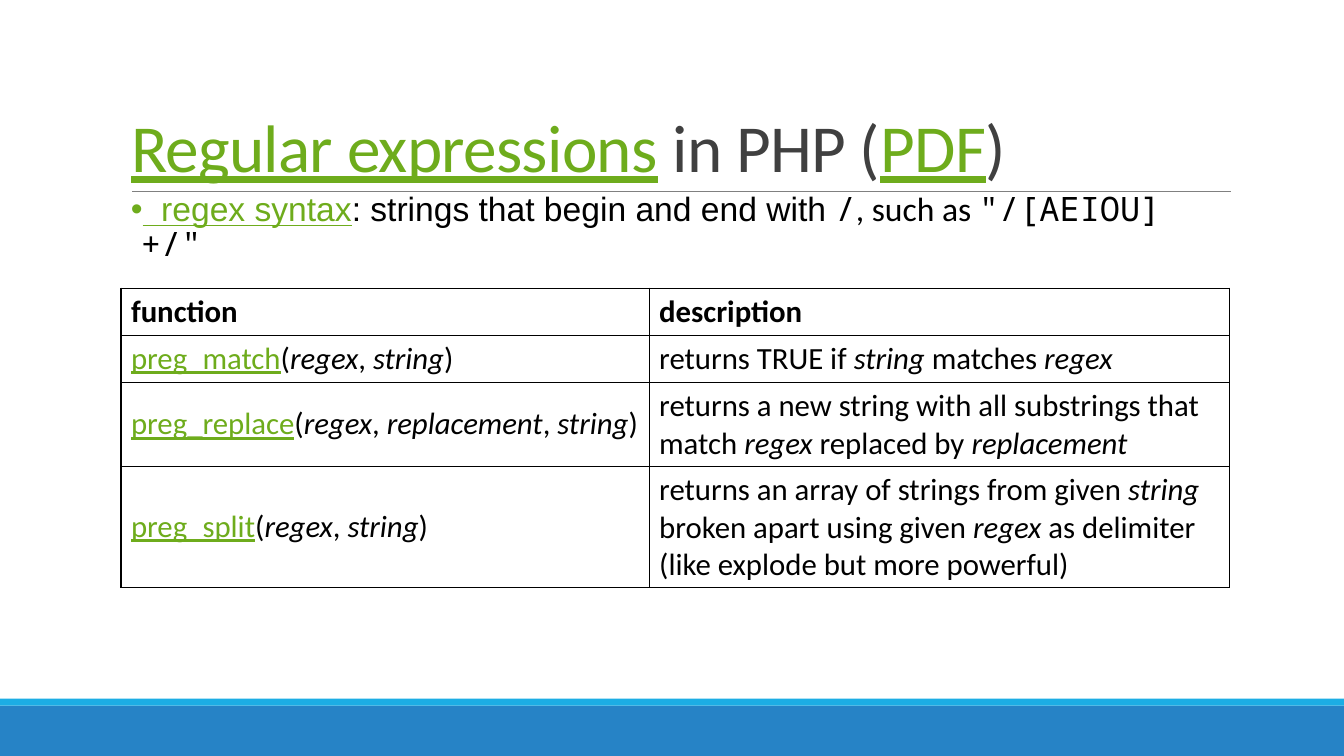
from typing import NamedTuple

from lxml import etree
from pptx import Presentation
from pptx import util as u
from pptx.dml.color import RGBColor
from pptx.enum import shapes, text
from pptx.oxml import ns

INK, LINK, GREY = "000000", "6EAC1C", "404040"
SANS, MONO = "Calibri", "Noto Sans Mono"
WIDE, HIGH = u.Inches(13.33), u.Inches(7.5)


class Run(NamedTuple):
    text: str
    color: str = INK
    font: str = SANS
    bold: bool = False
    ital: bool = False
    link: bool = False


class Bar(NamedTuple):
    top: float
    high: float
    color: str


class Row(NamedTuple):
    high: float
    left: list[Run]
    right: list[Run]


def hue(code: str) -> RGBColor:
    return RGBColor.from_string(code)


def across(share: float) -> int:
    return round(WIDE * share / 100)


def down(share: float) -> int:
    return round(HIGH * share / 100)


def area(left: float, top: float, wide: float, high: float) -> tuple[int, int, int, int]:
    return across(left), down(top), across(wide), down(high)


def link(word: str, font: str = SANS) -> Run:
    return Run(word, LINK, font, link=True)


def ital(word: str) -> Run:
    return Run(word, ital=True)


def call(name: str, *args: str) -> list[Run]:
    runs = [link(name), Run("(")]
    for spot, arg in enumerate(args):
        if spot:
            runs.append(Run(", "))
        runs.append(ital(arg))
    return runs + [Run(")")]


def write(para, runs: list[Run], size: float, gap: int = 0) -> None:
    for item in runs:
        run = para.add_run()
        run.text = item.text
        font = run.font
        font.name, font.size = item.font, u.Pt(size)
        font.bold, font.italic, font.underline = item.bold, item.ital, item.link
        font.color.rgb = hue(item.color)
        if gap:
            font._element.set("spc", str(gap))


def bullet(para, inset: int, color: str) -> None:
    props = para._p.get_or_add_pPr()
    props.set("marL", str(inset))
    props.set("indent", str(-inset))
    tint = etree.SubElement(props, ns.qn("a:buClr"))
    etree.SubElement(tint, ns.qn("a:srgbClr"), val=color)
    etree.SubElement(props, ns.qn("a:buFont"), typeface="Arial")
    etree.SubElement(props, ns.qn("a:buChar"), char="•")


def border(cell, color: str, width: int) -> None:
    props = cell._tc.get_or_add_tcPr()
    for spot, side in enumerate(("lnL", "lnR", "lnT", "lnB")):
        line = etree.Element(ns.qn(f"a:{side}"), w=str(width))
        fill = etree.SubElement(line, ns.qn("a:solidFill"))
        etree.SubElement(fill, ns.qn("a:srgbClr"), val=color)
        props.insert(spot, line)


def draw_bar(slide, bar: Bar) -> None:
    shape = slide.shapes.add_shape(
        shapes.MSO_SHAPE.RECTANGLE, *area(0, bar.top, 100, bar.high))
    shape.shadow.inherit = False
    shape.fill.solid()
    shape.fill.fore_color.rgb = hue(bar.color)
    shape.line.fill.background()


def draw_rule(slide) -> None:
    rule = slide.shapes.add_connector(
        shapes.MSO_CONNECTOR.STRAIGHT,
        across(9.83), down(25.33), across(91.6), down(25.33))
    rule.line.color.rgb = hue("808080")
    rule.line.width = u.Pt(0.5)
    etree.SubElement(rule._element.spPr, ns.qn("a:effectLst"))


def draw_title(slide, runs: list[Run]) -> None:
    title = slide.shapes.title
    title.left, title.top, title.width, title.height = area(9, 4.13, 82.5, 21.2)
    frame = title.text_frame
    frame.auto_size = text.MSO_AUTO_SIZE.NONE
    frame.vertical_anchor = text.MSO_ANCHOR.BOTTOM
    para = frame.paragraphs[0]
    para.alignment = text.PP_ALIGN.LEFT
    para.line_spacing = 0.85
    write(para, runs, 48, -50)


def draw_body(slide, runs: list[Run]) -> None:
    frame = slide.shapes.add_textbox(*area(9, 25.07, 78.84, 12.13)).text_frame
    frame.word_wrap = True
    para = frame.paragraphs[0]
    para.line_spacing = 0.85
    bullet(para, u.Inches(0.1), LINK)
    write(para, runs, 24)


def draw_table(slide, rows: list[Row], cols: list[float]) -> None:
    high = sum(row.high for row in rows)
    table = slide.shapes.add_table(
        len(rows), len(cols), *area(9, 38.13, sum(cols), high)).table
    table.first_row = table.horz_banding = False
    for col, wide in zip(table.columns, cols):
        col.width = across(wide)
    for line, row in zip(table.rows, rows):
        line.height = down(row.high)
        for cell, runs in zip(line.cells, (row.left, row.right)):
            cell.fill.background()
            cell.vertical_anchor = text.MSO_ANCHOR.MIDDLE
            border(cell, INK, u.Pt(1))
            write(cell.text_frame.paragraphs[0], runs, 22)


BARS = [Bar(93.33, 6.67, "2683C6"), Bar(92.4, 0.93, "1CADE4")]
TITLE = [link("Regular expressions"), Run(" in PHP (", GREY),
         link("PDF"), Run(")", GREY)]
BODY = [link("  regex syntax", "Arial"),
        Run(": strings that begin and end with ", font="Arial"),
        Run("/", font=MONO), Run(", such as "), Run('"/[AEIOU]+/"', font=MONO)]
ROWS = [
    Row(6.22, [Run("function", bold=True)], [Run("description", bold=True)]),
    Row(6.22, call("preg_match", "regex", "string"),
        [Run("returns TRUE if "), ital("string"), Run(" matches "), ital("regex")]),
    Row(11.1, call("preg_replace", "regex", "replacement", "string"),
        [Run("returns a new string with all substrings that match "),
         ital("regex"), Run(" replaced by "), ital("replacement")]),
    Row(16.06, call("preg_split", "regex", "string"),
        [Run("returns an array of strings from given "), ital("string"),
         Run(" broken apart using given "), ital("regex"),
         Run(" as delimiter (like explode but more powerful)")]),
]


def main() -> None:
    deck = Presentation()
    deck.slide_width, deck.slide_height = WIDE, HIGH
    slide = deck.slides.add_slide(deck.slide_layouts[5])
    for bar in BARS:
        draw_bar(slide, bar)
    draw_rule(slide)
    draw_title(slide, TITLE)
    draw_body(slide, BODY)
    draw_table(slide, ROWS, [39.3, 43.2])
    deck.save("out.pptx")


if __name__ == "__main__":
    main()
